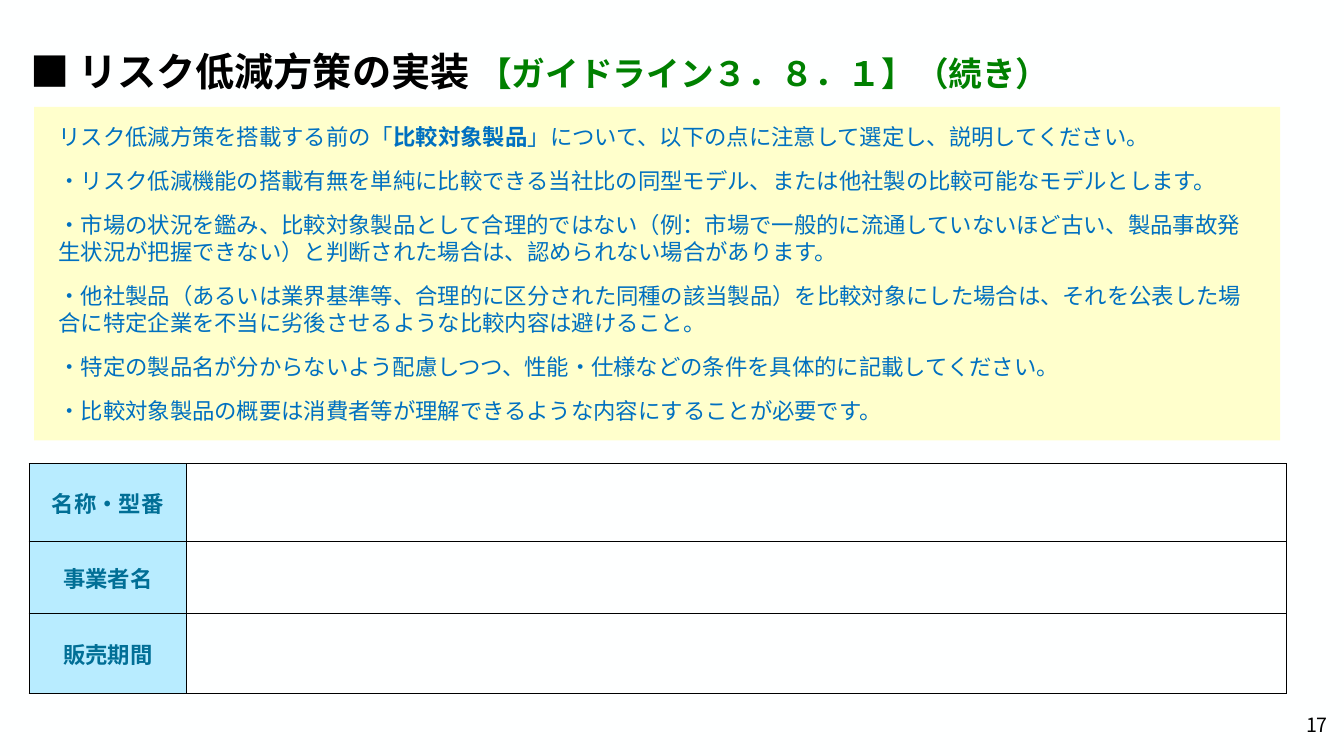
from pptx import Presentation
from pptx.dml.color import RGBColor
from pptx.enum import shapes, text
from pptx.oxml.ns import qn
from pptx.util import Pt
from lxml import etree

# Content
TITLE = [("■ リスク低減方策の実装 ", "title"), ("【ガイドライン３．８．１】（続き）", "subtitle")]
NOTES = [
    [("リスク低減方策を搭載する前の「", "note"), ("比較対象製品", "note_bold"),
     ("」について、以下の点に注意して選定し、説明してください。", "note")],
    [("・リスク低減機能の搭載有無を単純に比較できる当社比の同型モデル、または他社製の比較可能なモデルとします。", "note")],
    [("・市場の状況を鑑み、比較対象製品として合理的ではない（例：市場で一般的に流通していないほど古い、"
      "製品事故発生状況が把握できない）と判断された場合は、認められない場合があります。", "note")],
    [("・他社製品（あるいは業界基準等、合理的に区分された同種の該当製品）を比較対象にした場合は、"
      "それを公表した場合に特定企業を不当に劣後させるような比較内容は避けること。", "note")],
    [("・特定の製品名が分からないよう配慮しつつ、性能・仕様などの条件を具体的に記載してください。", "note")],
    [("・比較対象製品の概要は消費者等が理解できるような内容にすることが必要です。", "note")],
]
ROWS = [("名称・型番", 55.4), ("事業者名", 51.8), ("販売期間", 56.9)]
COLUMNS = [112.3, 785.5]
PAGE = [("17", "page")]

# Theme: text styles are (font, size, colour, bold)
JP = "Noto Sans CJK JP"
THEME = {
    "text": {
        "title": (JP, 28, "000000", True),
        "subtitle": (JP, 24, "008000", True),
        "note": (JP, 16, "0070C0", False),
        "note_bold": (JP, 16, "0070C0", True),
        "label": ("Calibri", 16, "016F96", True),
        "page": (JP, 14, "000000", False),
    },
    "background": "FEFFFF", "panel": "FFFFCC", "label_fill": "B8ECFF", "border": "000000",
}


def paint(fill, colour):
    fill.solid()
    fill.fore_color.rgb = RGBColor.from_string(colour)


def add_runs(p, runs):
    for words, style in runs:
        name, size, colour, bold = THEME["text"][style]
        r = p.add_run()
        r.text = words
        r.font.name, r.font.size, r.font.bold = name, Pt(size), bold
        r.font.color.rgb = RGBColor.from_string(colour)
        if name == JP:
            etree.SubElement(r.font._element, qn("a:ea")).set("typeface", name)


def set_insets(tf, left, top, right, bottom):
    tf.margin_left, tf.margin_top = Pt(left), Pt(top)
    tf.margin_right, tf.margin_bottom = Pt(right), Pt(bottom)


def border_cell(cell):
    tc_pr = cell._tc.get_or_add_tcPr()
    for i, side in enumerate(("a:lnL", "a:lnR", "a:lnT", "a:lnB")):
        ln = etree.Element(qn(side), w=str(Pt(1)))
        fill = etree.SubElement(ln, qn("a:solidFill"))
        etree.SubElement(fill, qn("a:srgbClr"), val=THEME["border"])
        tc_pr.insert(i, ln)


prs = Presentation()
prs.slide_width, prs.slide_height = Pt(960), Pt(540)
s = prs.slides.add_slide(prs.slide_layouts[6])
paint(s.background.fill, THEME["background"])

# Entry table
height = sum(h for _, h in ROWS)
table = s.shapes.add_table(len(ROWS), len(COLUMNS), Pt(20.9), Pt(331.2),
                           Pt(sum(COLUMNS)), Pt(height)).table
table.first_row = table.horz_banding = False
for column, width in zip(table.columns, COLUMNS):
    column.width = Pt(width)
for i, (label, row_height) in enumerate(ROWS):
    table.rows[i].height = Pt(row_height)
    name_cell, entry_cell = table.cell(i, 0), table.cell(i, 1)
    paint(name_cell.fill, THEME["label_fill"])
    entry_cell.fill.background()
    name_cell.vertical_anchor = text.MSO_ANCHOR.MIDDLE
    p = name_cell.text_frame.paragraphs[0]
    p.alignment = text.PP_ALIGN.CENTER
    add_runs(p, [(label, "label")])
    for cell in (name_cell, entry_cell):
        border_cell(cell)

# Page number
tf = s.shapes.add_textbox(Pt(918.7), Pt(506.9), Pt(41.3), Pt(33.1)).text_frame
tf.word_wrap = False
tf.vertical_anchor = text.MSO_ANCHOR.MIDDLE
set_insets(tf, 0, 0, 11.5, 11.5)
p = tf.paragraphs[0]
p.alignment = text.PP_ALIGN.RIGHT
add_runs(p, PAGE)

# Notes panel
sp = s.shapes.add_shape(shapes.MSO_SHAPE.RECTANGLE, Pt(24.5), Pt(76.3), Pt(889.9), Pt(238.3))
sp.shadow.inherit = False
paint(sp.fill, THEME["panel"])
sp.line.fill.background()
tf = sp.text_frame
tf.word_wrap = True
tf.auto_size = text.MSO_AUTO_SIZE.SHAPE_TO_FIT_TEXT
tf.vertical_anchor = text.MSO_ANCHOR.MIDDLE
set_insets(tf, 17.3, 11.5, 17.3, 11.5)
for i, runs in enumerate(NOTES):
    p = tf.add_paragraph() if i else tf.paragraphs[0]
    p.alignment = text.PP_ALIGN.LEFT
    p.line_spacing = Pt(19.4)
    p.space_before, p.space_after = Pt(6 if i else 0), Pt(6)
    add_runs(p, runs)

# Title
tf = s.shapes.add_textbox(Pt(14.4), Pt(30.2), Pt(902.9), Pt(46.1)).text_frame
tf.word_wrap = True
p = tf.paragraphs[0]
p.line_spacing = Pt(34)
add_runs(p, TITLE)

prs.save("out.pptx")
